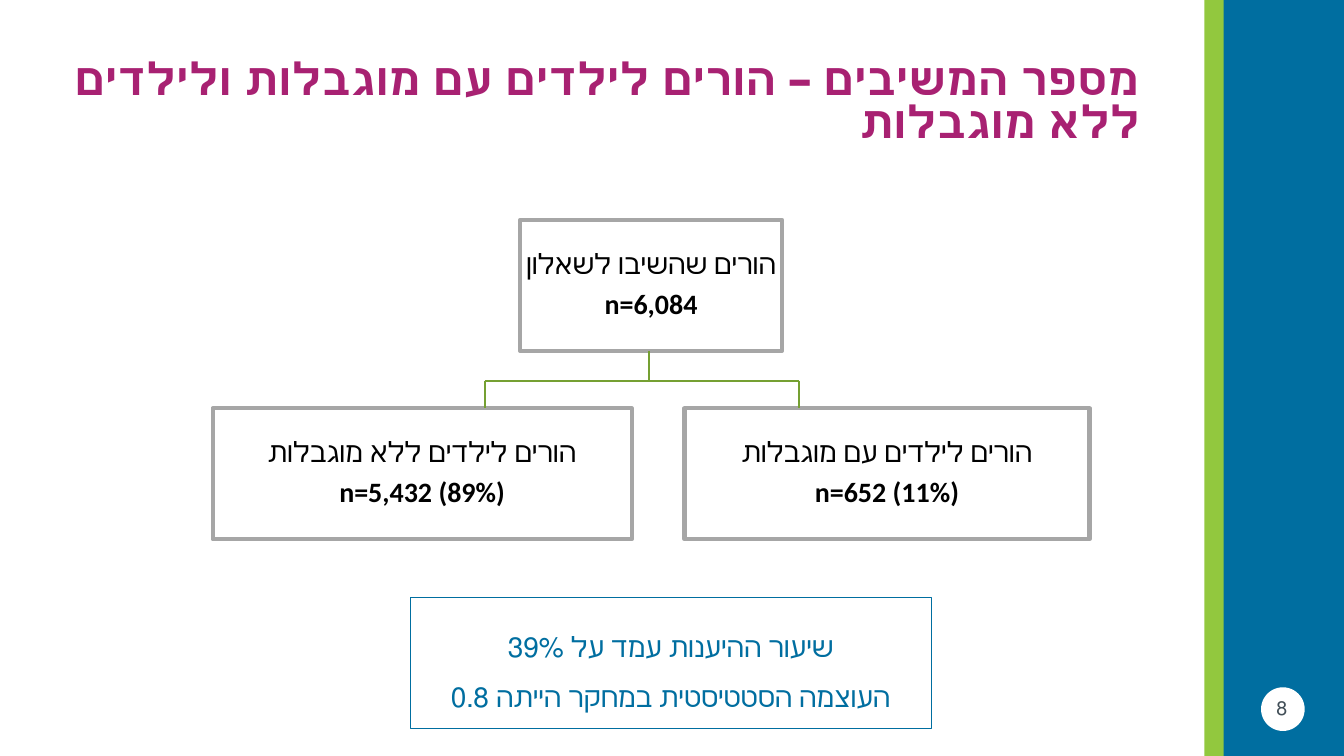
from dataclasses import dataclass

from lxml import etree
from pptx import Presentation
from pptx.dml.color import RGBColor
from pptx.enum.shapes import MSO_CONNECTOR, MSO_SHAPE
from pptx.enum.text import MSO_ANCHOR, PP_ALIGN
from pptx.oxml.ns import qn
from pptx.util import Cm, Pt

RECTANGLE, OVAL = MSO_SHAPE.RECTANGLE, MSO_SHAPE.OVAL
STRAIGHT = MSO_CONNECTOR.STRAIGHT
CENTER, RIGHT = PP_ALIGN.CENTER, PP_ALIGN.RIGHT
TOP, MIDDLE = MSO_ANCHOR.TOP, MSO_ANCHOR.MIDDLE


@dataclass(frozen=True)
class Theme:
    font: str = "Calibri"
    blue: str = "006EA0"
    lime: str = "92C83E"
    green: str = "75A032"
    magenta: str = "A82172"
    gray: str = "A6A6A6"
    slate: str = "424F58"
    white: str = "FFFFFF"
    black: str = "000000"
    title_size: int = 32
    body_size: int = 20
    number_size: int = 14


THEME = Theme()


def set_all(target, values):
    for name, value in values.items():
        setattr(target, name, value)


def add_box(page, area, kind=RECTANGLE, fill=None, line=None, width=1):
    box = page.shapes.add_shape(kind, *map(Cm, area))
    box.shadow.inherit = False
    if fill:
        box.fill.solid()
        box.fill.fore_color.rgb = RGBColor.from_string(fill)
    else:
        box.fill.background()
    if line:
        box.line.color.rgb = RGBColor.from_string(line)
        box.line.width = Pt(width)
    else:
        box.line.fill.background()
    return box


def write(box, lines, size, color, anchor=MIDDLE, margin=None, **layout):
    """Fill a box with right-to-left paragraphs, given as (text, bold) pairs."""
    frame = box.text_frame
    set_all(frame, {"word_wrap": True, "vertical_anchor": anchor})
    if margin is not None:
        sides = ("left", "top", "right", "bottom")
        set_all(frame, {f"margin_{side}": Cm(margin) for side in sides})
    for index, (text, bold) in enumerate(lines):
        para = frame.add_paragraph() if index else frame.paragraphs[0]
        set_all(para, {"alignment": CENTER, **layout})
        para._p.get_or_add_pPr().set("rtl", "1")
        span = para.add_run()
        span.text = text
        set_all(span.font, {"name": THEME.font, "size": Pt(size), "bold": bold})
        span.font.color.rgb = RGBColor.from_string(color)


def add_text(page, area, text, size, color, bold=False, **layout):
    box = page.shapes.add_textbox(*map(Cm, area))
    write(box, [(text, bold)], size, color, **layout)


def add_group_box(page, area, label, count):
    box = add_box(page, area, fill=THEME.white, line=THEME.gray, width=3)
    write(box, [(label, False), (count, True)], THEME.body_size, THEME.black,
          margin=0.03, line_spacing=0.9, space_after=Pt(7))


def add_branch(page, start, end):
    branch = page.shapes.add_connector(STRAIGHT, *map(Cm, start + end))
    branch.line.color.rgb = RGBColor.from_string(THEME.green)
    branch.line.width = Pt(1)
    etree.SubElement(branch._element.spPr, qn("a:effectLst"))


def add_side_band(page):
    add_box(page, (30.35, 0, 0.5, 19.05), fill=THEME.lime)
    add_box(page, (30.84, 0, 3.03, 19.05), fill=THEME.blue)
    add_box(page, (31.78, 17.32, 1.1, 1.1), OVAL, fill=THEME.white)
    add_text(page, (31.57, 17.42, 1.47, 1.02), "8", THEME.number_size,
             THEME.slate, anchor=TOP)


def add_tree(page):
    height, parent_top, child_top, fork = 3.3, 5.54, 10.29, 9.6
    trunk, left, right = 16.36, 12.22, 20.14
    groups = (
        (13.11, parent_top, 6.6, "הורים שהשיבו לשאלון", "n=6,084"),
        (5.36, child_top, 10.56, "הורים לילדים ללא מוגבלות", "n=5,432 (89%)"),
        (17.25, child_top, 10.21, "הורים לילדים עם מוגבלות", "n=652 (11%)"),
    )
    for x, y, width, label, count in groups:
        add_group_box(page, (x, y, width, height), label, count)
    add_branch(page, (right, fork), (left, fork))
    add_branch(page, (trunk, parent_top + height), (trunk, fork))
    for x in (left, right):
        add_branch(page, (x, fork), (x, child_top))


def main():
    deck = Presentation()
    set_all(deck, {"slide_width": Cm(33.87), "slide_height": Cm(19.05)})
    page = deck.slides.add_slide(deck.slide_layouts[6])
    add_side_band(page)
    add_text(page, (0.81, 0.79, 28.17, 3.68),
             "מספר המשיבים – הורים לילדים עם מוגבלות ולילדים ללא מוגבלות",
             THEME.title_size, THEME.magenta, bold=True,
             alignment=RIGHT, line_spacing=0.8)
    add_tree(page)
    note = add_box(page, (10.34, 15.06, 13.13, 3.3), line=THEME.blue)
    lines = ("שיעור ההיענות עמד על 39%", "העוצמה הסטטיסטית במחקר הייתה 0.8")
    write(note, [(line, False) for line in lines], THEME.body_size, THEME.blue,
          line_spacing=1.5)
    deck.save("out.pptx")


if __name__ == "__main__":
    main()
